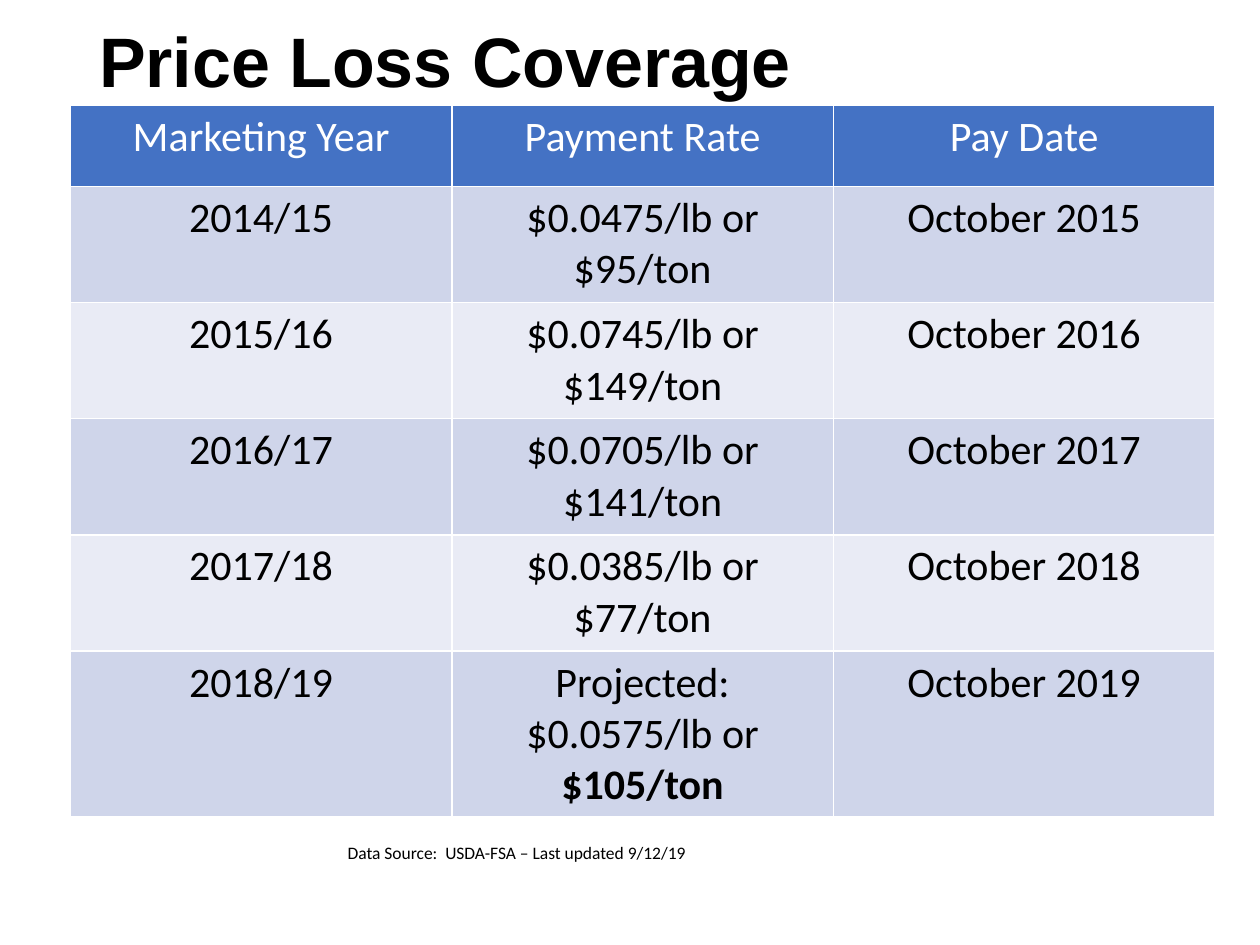
import pptx
import pptx.util
import pptx.dml.color
import pptx.enum.text
import pptx.oxml
import pptx.oxml.ns
from pptx.util import Cm

TITLE = "Price Loss Coverage"
HEADER = ("Marketing Year", "Payment Rate", "Pay Date")
PAYMENTS = [
    ("2014/15", "$0.0475/lb or $95/ton", "October 2015"),
    ("2015/16", "$0.0745/lb or $149/ton", "October 2016"),
    ("2016/17", "$0.0705/lb or $141/ton", "October 2017"),
    ("2017/18", "$0.0385/lb or $77/ton", "October 2018"),
    ("2018/19", ("Projected: $0.0575/lb or ", "$105/ton"), "October 2019"),
]
SOURCE = "Data Source:  USDA-FSA – Last updated 9/12/19"
COLORS = {
    "text": "000000",
    "header_text": "FFFFFF",
    "header": "4472C4",
    "odd": "CFD5EA",
    "even": "E9EBF5",
    "border": "FFFFFF",
}
COLUMN_WIDTH = Cm(7.69)
ROW_HEIGHTS = [Cm(1.63)] + [Cm(2.34)] * 4 + [Cm(3.35)]


def rgb(name):
    return pptx.dml.color.RGBColor.from_string(COLORS[name])


def style(font, name, size, color, bold=False):
    font.name = name
    font.size = pptx.util.Pt(size)
    font.bold = bold
    font.color.rgb = rgb(color)


def add_text(slide, text, box):
    tf = slide.shapes.add_textbox(*box).text_frame
    tf.word_wrap = True
    tf.text = text
    p = tf.paragraphs[0]
    return p, p.runs[0].font


def set_borders(cell):
    """Draw a 1 pt line on all four sides; lines must precede the cell fill."""
    tc_pr = cell._tc.get_or_add_tcPr()
    for i, side in enumerate(("lnL", "lnR", "lnT", "lnB")):
        tc_pr.insert(i, pptx.oxml.parse_xml(
            f'<a:{side} {pptx.oxml.ns.nsdecls("a")} w="12700"><a:solidFill>'
            f'<a:srgbClr val="{COLORS["border"]}"/></a:solidFill></a:{side}>'))


def fill_cell(cell, content, fill, color):
    """Write plain text, or a (plain, bold) pair, centred in the cell."""
    parts = (content,) if isinstance(content, str) else content
    p = cell.text_frame.paragraphs[0]
    p.alignment = pptx.enum.text.PP_ALIGN.CENTER
    for i, part in enumerate(parts):
        r = p.add_run()
        r.text = part
        style(r.font, "Calibri", 24, color, bold=i > 0)
    cell.fill.solid()
    cell.fill.fore_color.rgb = rgb(fill)
    set_borders(cell)


def add_payment_table(slide):
    rows = [HEADER] + PAYMENTS
    table = slide.shapes.add_table(
        len(rows), len(HEADER), Cm(1.42), Cm(2.13),
        COLUMN_WIDTH * len(HEADER), sum(ROW_HEIGHTS)).table
    for column in table.columns:
        column.width = COLUMN_WIDTH
    for i, (row, height) in enumerate(zip(rows, ROW_HEIGHTS)):
        table.rows[i].height = height
        fill = "header" if i == 0 else "odd" if i % 2 else "even"
        color = "header_text" if i == 0 else "text"
        for j, content in enumerate(row):
            fill_cell(table.cell(i, j), content, fill, color)


def main():
    prs = pptx.Presentation()
    prs.slide_width, prs.slide_height = Cm(25.4), Cm(19.05)
    s = prs.slides.add_slide(prs.slide_layouts[6])

    p, font = add_text(s, TITLE, (Cm(1.75), Cm(0.43), Cm(21.9), Cm(3.15)))
    p.line_spacing = 0.9
    style(font, "Arial", 40, "text", bold=True)

    add_payment_table(s)

    p, font = add_text(s, SOURCE, (Cm(6.76), Cm(16.84), Cm(8.33), Cm(0.69)))
    style(font, "Calibri", 10, "text")

    prs.save("out.pptx")


if __name__ == "__main__":
    main()
